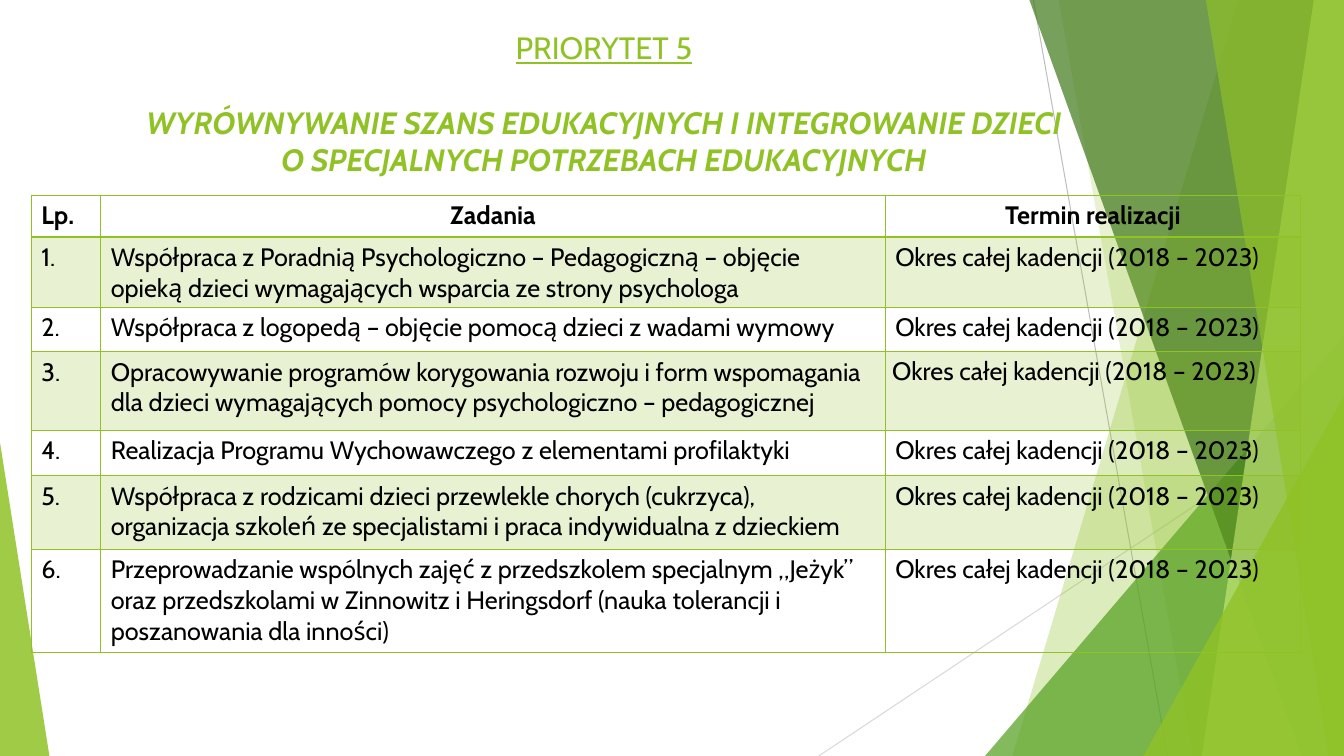
from lxml import etree
from pptx import Presentation
from pptx.dml.color import RGBColor
from pptx.enum.shapes import MSO_CONNECTOR, MSO_SHAPE
from pptx.enum.text import MSO_ANCHOR, PP_ALIGN
from pptx.oxml import parse_xml
from pptx.oxml.ns import nsdecls, qn
from pptx.util import Inches, Pt

STRAIGHT = MSO_CONNECTOR.STRAIGHT
TRIANGLE = MSO_SHAPE.ISOSCELES_TRIANGLE
CENTER, LEFT = PP_ALIGN.CENTER, PP_ALIGN.LEFT
TOP = MSO_ANCHOR.TOP
FONT = "Cabin"
GREEN = "90C226"
WIDTH, HEIGHT = 13.33, 7.5


def paint(fill, properties, color, opacity):
    """Give a solid fill, opacity in percent, to the owner of the properties element."""
    fill.solid()
    fill.fore_color.rgb = RGBColor.from_string(color)
    rgb = properties.find(qn("a:solidFill") + "/" + qn("a:srgbClr"))
    etree.SubElement(rgb, qn("a:alpha")).set("val", str(opacity * 1000))


def write(paragraph, text, align, color, **font_format):
    paragraph.alignment = align
    run = paragraph.add_run()
    run.text = text
    run.font.name = FONT
    run.font.color.rgb = RGBColor.from_string(color)
    for name, value in font_format.items():
        setattr(run.font, name, value)


prs = Presentation()
prs.slide_width, prs.slide_height = Inches(WIDTH), Inches(HEIGHT)
slide = prs.slides.add_slide(prs.slide_layouts[6])
shapes = slide.shapes

# Thin rays behind the facets
for x1, y1, x2, y2, color in [
    (10.25, 0, 11.58, HEIGHT, "BFBFBF"),
    (WIDTH, 4.03, 8.12, HEIGHT, "D9D9D9"),
]:
    ray = shapes.add_connector(STRAIGHT, Inches(x1), Inches(y1), Inches(x2), Inches(y2))
    ray.line.color.rgb = RGBColor.from_string(color)
    ray.line.width = Pt(0.75)
    etree.SubElement(ray._element.spPr, qn("a:effectLst"))

# Facets: a band (top x, bottom x) reaches the right edge,
# a triangle (left, top, width, apex) stands on the bottom edge
facets = [
    ((12.28, 10.04), GREEN, 30),
    ((10.5, 11.83), GREEN, 20),
    ((9.77, 3.33, 3.56, 1), "54A021", 72),
    ((10.21, 12.91), "3F7819", 70),
    ((13.03, 11.92), "C0E474", 70),
    ((11.96, 13.18), GREEN, 65),
    ((11.34, 3.93, 1.99, 1), GREEN, 80),
    ((0, 4.39, 0.49, 0), GREEN, 85),
]
for geometry, color, opacity in facets:
    if len(geometry) == 2:
        top_x, bottom_x = geometry
        outline = shapes.build_freeform(Inches(top_x), 0)
        corners = [(WIDTH, 0), (WIDTH, HEIGHT), (bottom_x, HEIGHT)]
        outline.add_line_segments([(Inches(x), Inches(y)) for x, y in corners])
        facet = outline.convert_to_shape()
    else:
        left, top, width, apex = geometry
        facet = shapes.add_shape(
            TRIANGLE, Inches(left), Inches(top), Inches(width), Inches(HEIGHT - top))
        facet.adjustments[0] = apex
    paint(facet.fill, facet._element.spPr, color, opacity)
    facet.line.fill.background()
    facet.shadow.inherit = False

# Title
title = shapes.add_textbox(Inches(1.29), Inches(0.24), Inches(9.4), Inches(1.7)).text_frame
title.word_wrap = True
title.vertical_anchor = TOP
write(title.paragraphs[0], "PRIORYTET 5", CENTER, GREEN, size=Pt(22), underline=True)
priority = title.add_paragraph()
priority.space_before = Pt(27)
write(priority,
      "WYRÓWNYWANIE SZANS EDUKACYJNYCH I INTEGROWANIE DZIECI O SPECJALNYCH POTRZEBACH EDUKACYJNYCH",
      CENTER, GREEN, size=Pt(22), bold=True, italic=True)

# Task table
tasks = [
    "Współpraca z Poradnią Psychologiczno – Pedagogiczną – objęcie opieką dzieci wymagających wsparcia ze strony psychologa",
    "Współpraca z logopedą – objęcie pomocą dzieci z wadami wymowy",
    "Opracowywanie programów korygowania rozwoju i form wspomagania dla dzieci wymagających pomocy psychologiczno – pedagogicznej",
    "Realizacja Programu Wychowawczego z elementami profilaktyki",
    "Współpraca z rodzicami dzieci przewlekle chorych (cukrzyca), organizacja szkoleń ze specjalistami i praca indywidualna z dzieckiem",
    "Przeprowadzanie wspólnych zajęć z przedszkolem specjalnym „Jeżyk” oraz przedszkolami w Zinnowitz i Heringsdorf (nauka tolerancji i poszanowania dla inności)",
]
term = "Okres całej kadencji (2018 – 2023)"
rows = [("Lp.", "Zadania", "Termin realizacji")]
rows += [(f"{number}.", task, term) for number, task in enumerate(tasks, 1)]
column_widths = [0.69, 7.78, 4.12]
row_heights = [0.41, 0.7, 0.44, 0.78, 0.45, 0.73, 1.02]

table = shapes.add_table(
    len(rows), len(column_widths), Inches(0.31), Inches(1.94),
    Inches(sum(column_widths)), Inches(sum(row_heights))).table
table.first_row = table.horz_banding = False
for column, width in zip(table.columns, column_widths):
    column.width = Inches(width)
for row, height in zip(table.rows, row_heights):
    row.height = Inches(height)

for r, texts in enumerate(rows):
    for c, text in enumerate(texts):
        cell = table.cell(r, c)
        header = r == 0
        write(cell.text_frame.paragraphs[0], text, CENTER if header and c else LEFT,
              "000000", size=Pt(18), bold=header)
        properties = cell._tc.get_or_add_tcPr()
        for side in "LRTB":
            thick = (r, side) in [(0, "B"), (1, "T")]
            properties.append(parse_xml(
                f'<a:ln{side} {nsdecls("a")} w="{Pt(2 if thick else 1)}"><a:solidFill>'
                f'<a:srgbClr val="{GREEN}"/></a:solidFill></a:ln{side}>'))
        if r % 2:
            paint(cell.fill, properties, GREEN, 20)
        else:
            cell.fill.background()

# The third term has its own insets and line spacing
third_term = table.cell(3, 2)
third_term.margin_left = third_term.margin_right = Inches(0.07)
third_term.margin_top = third_term.margin_bottom = 0
third_term.text_frame.paragraphs[0].line_spacing = 1.15

prs.save("out.pptx")
